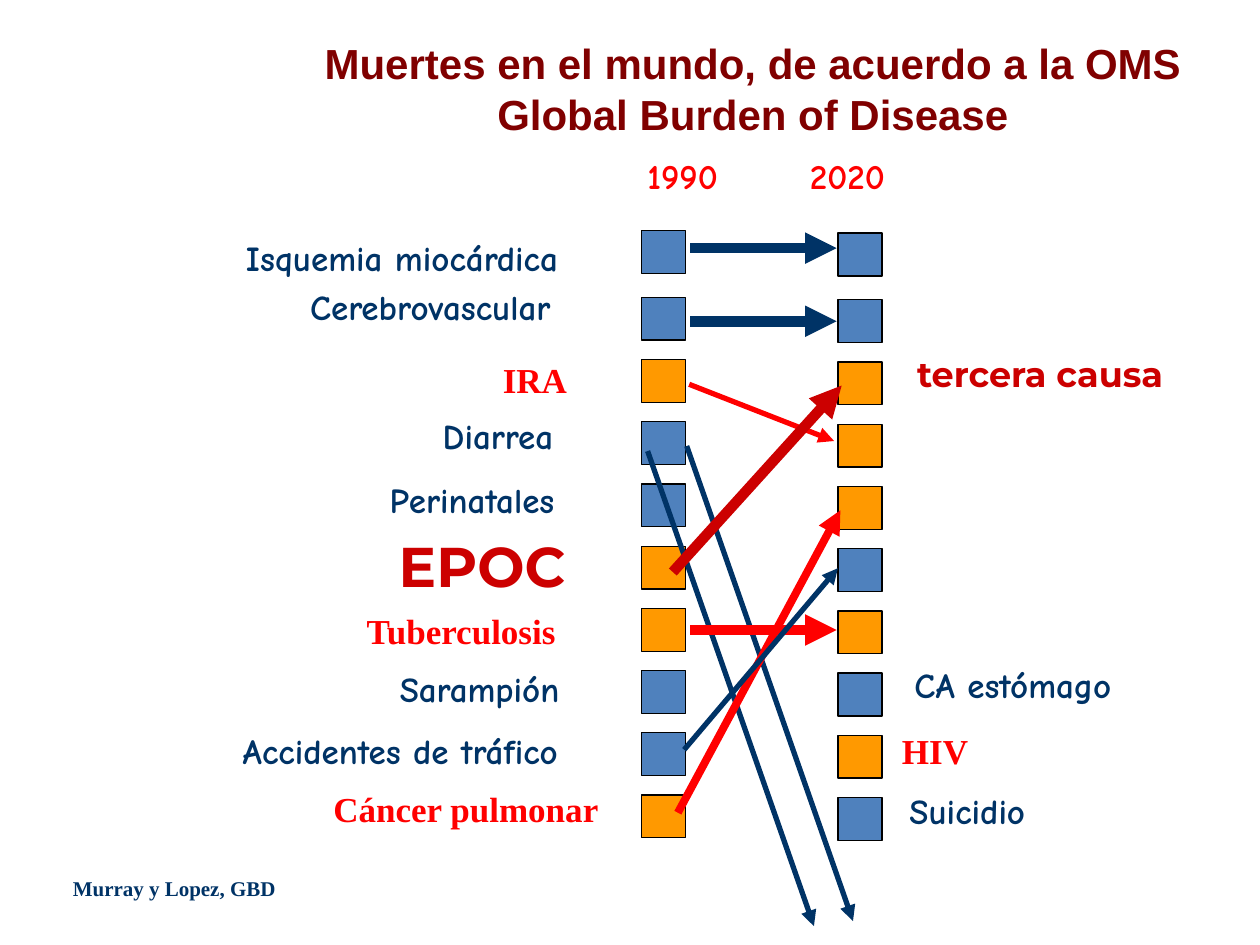
import pptx
import pptx.util
import pptx.dml.color
import pptx.enum.shapes
import pptx.enum.text
import pptx.oxml.ns
from lxml import etree
from pptx.util import Inches, Pt

RGBColor = pptx.dml.color.RGBColor
Align = pptx.enum.text.PP_ALIGN
Anchor = pptx.enum.text.MSO_ANCHOR
qn = pptx.oxml.ns.qn

NAVY = RGBColor(0x00, 0x33, 0x66)
RED = RGBColor(0xFF, 0x00, 0x00)
CRIMSON = RGBColor(0xCC, 0x00, 0x00)
MAROON = RGBColor(0x80, 0x00, 0x00)
BLUE = RGBColor(0x4F, 0x81, 0xBD)
ORANGE = RGBColor(0xFF, 0x99, 0x00)
BLACK = RGBColor(0x00, 0x00, 0x00)

# Label styles: font, colour, size in points
PLAIN = ("Comic Neue", NAVY, 20)
LUNG = ("Times New Roman", RED, 20)
COPD = ("Montserrat", CRIMSON, 20)
COPD_LARGE = ("Montserrat", CRIMSON, 32)
YEARS = ("Comic Neue", RED, 20)
SOURCE = ("Times New Roman", NAVY, 12)
TITLE = ("Arial", MAROON, 24)

# Box (left, top, width, height), right edge of the text, wording, style
CAUSES_1990 = [
    ((1.36, 1.83, 3.44, 0.44), 4.43, "Isquemia miocárdica", PLAIN),
    ((1.86, 2.22, 2.87, 0.44), 4.37, "Cerebrovascular", PLAIN),
    ((3.39, 2.80, 1.21, 0.44), 4.50, "IRA", LUNG),
    ((2.92, 3.24, 1.73, 0.44), 4.39, "Diarrea", PLAIN),
    ((2.49, 3.75, 2.19, 0.44), 4.40, "Perinatales", PLAIN),
    ((2.56, 4.17, 2.08, 0.64), 4.49, "EPOC", COPD_LARGE),
    ((2.31, 4.79, 2.22, 0.44), 4.41, "Tuberculosis", LUNG),
    ((2.58, 5.25, 2.09, 0.44), 4.44, "Sarampión", PLAIN),
    ((1.83, 5.74, 3.17, 0.44), 4.43, "Accidentes de tráfico", PLAIN),
    ((2.55, 6.20, 2.32, 0.44), 4.75, "Cáncer pulmonar", LUNG),
]
CAUSES_2020 = [
    ((7.18, 2.75, 2.35, 0.44), "tercera causa", COPD),
    ((7.16, 5.22, 1.94, 0.44), "CA estómago", PLAIN),
    ((7.06, 5.74, 0.73, 0.44), "HIV", LUNG),
    ((7.12, 6.22, 1.23, 0.44), "Suicidio", PLAIN),
]
# Start, end, colour, width in points
RANK_CHANGES = [
    ((5.48, 1.97), (6.64, 1.97), NAVY, 6),
    ((5.48, 2.55), (6.64, 2.55), NAVY, 6),
    ((5.47, 3.05), (6.62, 3.50), RED, 3),
    ((5.45, 3.54), (6.77, 7.31), NAVY, 3),
    ((5.14, 3.58), (6.46, 7.35), NAVY, 3),
    ((5.34, 4.54), (6.68, 3.06), CRIMSON, 6),
    ((5.48, 5.00), (6.64, 5.00), RED, 6),
    ((5.38, 6.45), (6.67, 4.05), RED, 4.5),
    ((5.43, 5.95), (6.65, 4.51), NAVY, 3),
]
# Rows filled orange, counted from the top
LUNG_ROWS_1990 = {2, 5, 6, 9}
LUNG_ROWS_2020 = {2, 3, 4, 6, 8}
ROWS = 10


def add_text(page, box, lines, style, align=Align.LEFT, anchor=Anchor.TOP,
             left_inset=0.1, right_inset=0.1):
    font_name, color, size = style
    text_box = page.shapes.add_textbox(*map(Inches, box))
    frame = text_box.text_frame
    frame.word_wrap = True
    frame.vertical_anchor = anchor
    frame.margin_left = Inches(left_inset)
    frame.margin_right = Inches(right_inset)
    for index, line in enumerate(lines):
        para = frame.add_paragraph() if index else frame.paragraphs[0]
        para.alignment = align
        span = para.add_run()
        span.text = line
        span.font.name = font_name
        span.font.size = Pt(size)
        span.font.bold = True
        span.font.color.rgb = color
    return frame


def add_year_heading(page, box):
    frame = add_text(page, box, ["1990\t2020"], YEARS)
    properties = frame.paragraphs[0]._p.get_or_add_pPr()
    tabs = etree.SubElement(properties, qn("a:tabLst"))
    etree.SubElement(tabs, qn("a:tab"), pos=str(Inches(1.29)), algn="l")


def add_rank_column(page, left, top, lung_rows):
    """Stack the ranked squares; the first gap is a little wider than the rest."""
    pitch = 3.95 / (ROWS - 2)
    for row in range(ROWS):
        y = top + 0.53 + (row - 1) * pitch if row else top
        square = page.shapes.add_shape(
            pptx.enum.shapes.MSO_SHAPE.RECTANGLE,
            Inches(left), Inches(y), Inches(0.35), Inches(0.34))
        square.shadow.inherit = False
        square.fill.solid()
        square.fill.fore_color.rgb = ORANGE if row in lung_rows else BLUE
        square.line.color.rgb = BLACK
        square.line.width = Pt(0.75)


def add_arrow(page, start, end, color, width):
    arrow = page.shapes.add_connector(
        pptx.enum.shapes.MSO_CONNECTOR.STRAIGHT, *map(Inches, start + end))
    arrow.line.color.rgb = color
    arrow.line.width = Pt(width)
    etree.SubElement(arrow.line._get_or_add_ln(), qn("a:tailEnd"), type="triangle")
    etree.SubElement(arrow._element.spPr, qn("a:effectLst"))


def add_cause_labels(page):
    for box, text_right, cause, style in CAUSES_1990:
        add_text(page, box, [cause], style, Align.RIGHT, left_inset=0,
                 right_inset=box[0] + box[2] - text_right)
    for box, cause, style in CAUSES_2020:
        add_text(page, box, [cause], style, right_inset=0)


def main():
    deck = pptx.Presentation()
    deck.slide_width, deck.slide_height = Inches(10), Inches(7.5)
    page = deck.slides.add_slide(deck.slide_layouts[6])
    add_rank_column(page, 5.09, 1.83, LUNG_ROWS_1990)
    add_rank_column(page, 6.65, 1.85, LUNG_ROWS_2020)
    add_year_heading(page, (5.04, 1.18, 2.26, 0.44))
    add_cause_labels(page)
    for change in RANK_CHANGES:
        add_arrow(page, *change)
    add_text(page, (0.48, 6.9, 1.81, 0.3), ["Murray y Lopez, GBD"], SOURCE)
    add_text(page, (2.42, 0.43, 7.11, 0.72),
             ["Muertes en el mundo, de acuerdo a la OMS", "Global Burden of Disease"],
             TITLE, Align.CENTER, Anchor.BOTTOM, left_inset=0, right_inset=0)
    deck.save("out.pptx")


if __name__ == "__main__":
    main()
